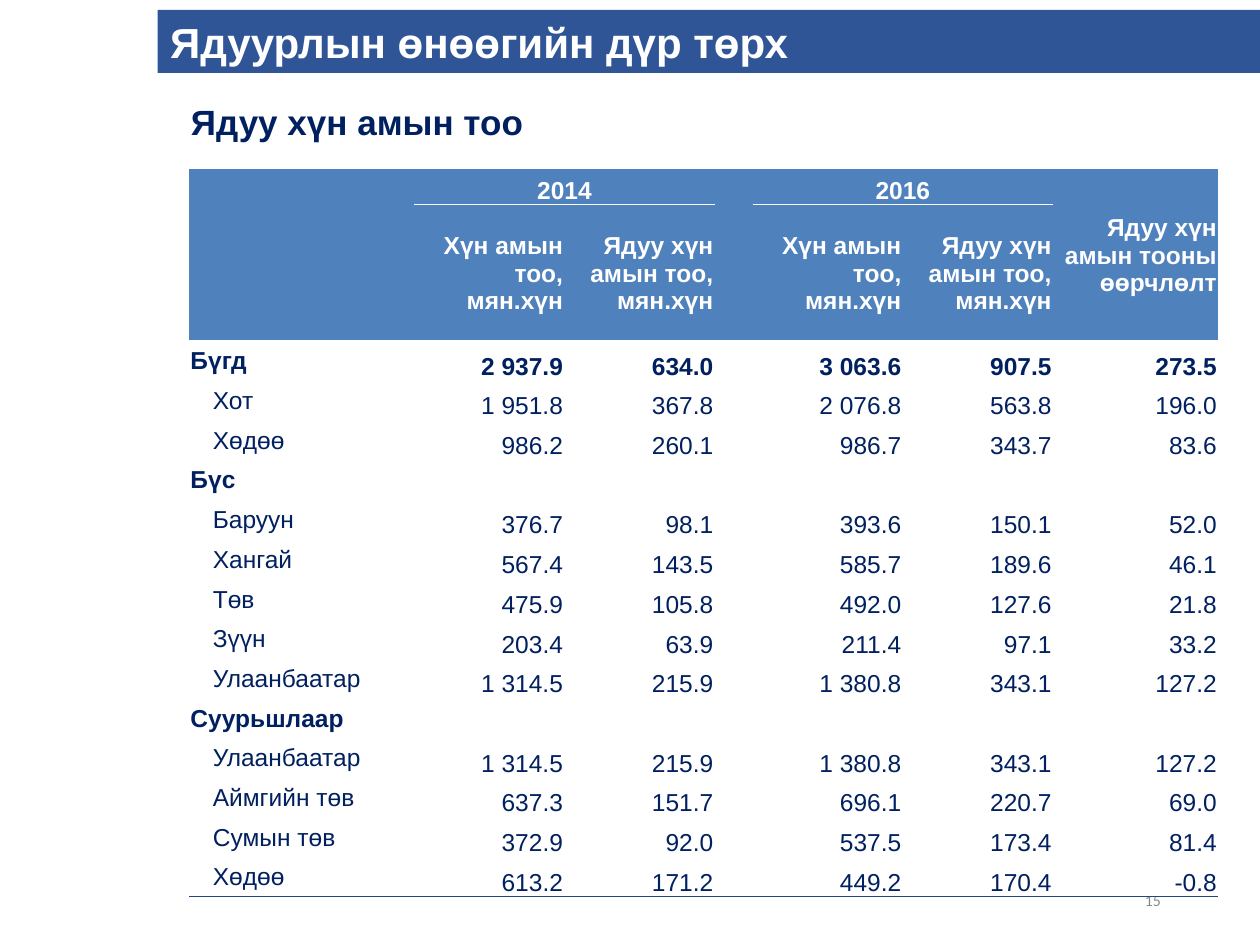
from dataclasses import dataclass

from lxml import etree
from pptx import Presentation
from pptx.dml.color import RGBColor
from pptx.enum.shapes import MSO_SHAPE
from pptx.enum.text import MSO_ANCHOR, PP_ALIGN
from pptx.oxml.ns import qn
from pptx.util import Cm, Pt

LEFT, CENTER, RIGHT = PP_ALIGN.LEFT, PP_ALIGN.CENTER, PP_ALIGN.RIGHT
TOP, MIDDLE, BOTTOM = MSO_ANCHOR.TOP, MSO_ANCHOR.MIDDLE, MSO_ANCHOR.BOTTOM
RECTANGLE = MSO_SHAPE.RECTANGLE


@dataclass(frozen=True)
class Theme:
    banner: str = "2F5597"
    header: str = "4F81BD"
    navy: str = "002060"
    rule: str = "1F497D"
    white: str = "FFFFFF"
    grey: str = "898989"
    font: str = "Arial"
    number_font: str = "Calibri"
    title_size: int = 24
    heading_size: int = 20
    table_size: int = 14
    number_size: int = 9


COLUMN_WIDTHS = [4.54, 3.03, 3.03, 0.76, 3.03, 3.03, 3.33]
HEADER_HEIGHTS = [0.73, 2.74]
BODY_HEIGHT = 0.8
VALUE_COLUMNS = [1, 2, 4, 5, 6]
YEARS = {1: "2014", 4: "2016"}
POPULATION = "Хүн амын тоо, мян.хүн"
POOR = "Ядуу хүн амын тоо, мян.хүн"
CHANGE = "Ядуу хүн амын тооны өөрчлөлт"
GROUPS = {"Бүгд", "Бүс", "Суурьшлаар"}
ROWS = [
    ("Бүгд", "2 937.9", "634.0", "3 063.6", "907.5", "273.5"),
    ("Хот", "1 951.8", "367.8", "2 076.8", "563.8", "196.0"),
    ("Хөдөө", "986.2", "260.1", "986.7", "343.7", "83.6"),
    ("Бүс",),
    ("Баруун", "376.7", "98.1", "393.6", "150.1", "52.0"),
    ("Хангай", "567.4", "143.5", "585.7", "189.6", "46.1"),
    ("Төв", "475.9", "105.8", "492.0", "127.6", "21.8"),
    ("Зүүн", "203.4", "63.9", "211.4", "97.1", "33.2"),
    ("Улаанбаатар", "1 314.5", "215.9", "1 380.8", "343.1", "127.2"),
    ("Суурьшлаар",),
    ("Улаанбаатар", "1 314.5", "215.9", "1 380.8", "343.1", "127.2"),
    ("Аймгийн төв", "637.3", "151.7", "696.1", "220.7", "69.0"),
    ("Сумын төв", "372.9", "92.0", "537.5", "173.4", "81.4"),
    ("Хөдөө", "613.2", "171.2", "449.2", "170.4", "-0.8"),
]


def write(frame, text, *, size, color, font, bold=False, align=LEFT):
    para = frame.paragraphs[0]
    para.alignment = align
    if not text:
        etree.SubElement(para._p, qn("a:endParaRPr"), sz=str(size * 100))
        return
    span = para.add_run()
    span.text = text
    span.font.size = Pt(size)
    span.font.name = font
    span.font.bold = bold
    span.font.color.rgb = RGBColor.from_string(color)


class SlideBuilder:
    def __init__(self, page, theme):
        self.page = page
        self.theme = theme

    def banner(self, text, left, top, width, height):
        box = self.page.shapes.add_shape(
            RECTANGLE, Cm(left), Cm(top), Cm(width), Cm(height))
        box.shadow.inherit = False
        box.fill.solid()
        box.fill.fore_color.rgb = RGBColor.from_string(self.theme.banner)
        box.line.fill.background()
        write(box.text_frame, text, size=self.theme.title_size,
              color=self.theme.white, font=self.theme.font, bold=True)

    def text(self, text, left, top, width, height, anchor=TOP, **style):
        box = self.page.shapes.add_textbox(
            Cm(left), Cm(top), Cm(width), Cm(height))
        box.text_frame.word_wrap = True
        box.text_frame.vertical_anchor = anchor
        write(box.text_frame, text, **style)

    def table(self, left, top, widths, heights):
        frame = self.page.shapes.add_table(
            len(heights), len(widths), Cm(left), Cm(top),
            Cm(sum(widths)), Cm(sum(heights)))
        table = frame.table
        table.first_row = table.horz_banding = False
        for column, width in zip(table.columns, widths):
            column.width = Cm(width)
        for row, height in zip(table.rows, heights):
            row.height = Cm(height)
        return table

    def cell(self, cell, text, *, fill, color, anchor, align, bold=False,
             indent=0.03, above=None, below=None):
        cell.margin_left, cell.margin_right = Cm(indent), Cm(0.03)
        cell.margin_top, cell.margin_bottom = Cm(0.03), Cm(0)
        cell.vertical_anchor = anchor
        self.borders(cell, above, below)
        cell.fill.solid()
        cell.fill.fore_color.rgb = RGBColor.from_string(fill)
        write(cell.text_frame, text, size=self.theme.table_size, color=color,
              font=self.theme.font, bold=bold, align=align)

    def borders(self, cell, above, below):
        properties = cell._tc.get_or_add_tcPr()
        sides = {"lnL": None, "lnR": None, "lnT": above, "lnB": below}
        for side, color in sides.items():
            line = etree.SubElement(
                properties, qn(f"a:{side}"), w=str(Pt(0.5)))
            if color:
                solid = etree.SubElement(line, qn("a:solidFill"))
                etree.SubElement(solid, qn("a:srgbClr"), val=color)
            else:
                etree.SubElement(line, qn("a:noFill"))

    def header_rows(self, table):
        white = self.theme.white
        last = len(COLUMN_WIDTHS) - 1
        years = {**YEARS, last: CHANGE}
        measures = {1: POPULATION, 2: POOR, 4: POPULATION, 5: POOR}
        for row, labels in enumerate((years, measures)):
            for column in range(last + 1):
                ruled = white if column in measures else None
                self.cell(
                    table.cell(row, column), labels.get(column, ""),
                    fill=self.theme.header, color=white, bold=True,
                    anchor=BOTTOM if row == 0 and column in YEARS else MIDDLE,
                    align=CENTER if row == 0 and column in YEARS else RIGHT,
                    above=white if row == 0 else ruled,
                    below=ruled if row == 0 else white)
        for column in YEARS:
            table.cell(0, column).merge(table.cell(0, column + 1))
        for column in (0, last):
            table.cell(0, column).merge(table.cell(1, column))

    def body_rows(self, table):
        for row, (label, *values) in enumerate(ROWS, len(HEADER_HEIGHTS)):
            texts = dict(zip(VALUE_COLUMNS, values))
            texts[0] = label
            group = label in GROUPS
            final = row == len(table.rows) - 1
            for column in range(len(COLUMN_WIDTHS)):
                first = column == 0
                self.cell(
                    table.cell(row, column), texts.get(column, ""),
                    fill=self.theme.white, color=self.theme.navy, bold=group,
                    anchor=MIDDLE if first else BOTTOM,
                    align=LEFT if first else RIGHT,
                    indent=0.48 if first and not group else 0.03,
                    above=self.theme.white if group else None,
                    below=self.theme.rule if final else None)


def main():
    deck = Presentation()
    deck.slide_width, deck.slide_height = Cm(25.4), Cm(19.05)
    theme = Theme()
    slide = SlideBuilder(deck.slides.add_slide(deck.slide_layouts[6]), theme)
    slide.text("15", 17.93, 17.65, 5.72, 1.01, anchor=MIDDLE, align=RIGHT,
               size=theme.number_size, color=theme.grey,
               font=theme.number_font)
    slide.banner("Ядуурлын өнөөгийн дүр төрх", 3.18, 0.2, 22.22, 1.27)
    slide.text("Ядуу хүн амын тоо", 3.6, 1.9, 18.62, 1.11, bold=True,
               size=theme.heading_size, color=theme.navy, font=theme.font)
    table = slide.table(3.81, 3.4, COLUMN_WIDTHS,
                        HEADER_HEIGHTS + [BODY_HEIGHT] * len(ROWS))
    slide.header_rows(table)
    slide.body_rows(table)
    deck.save("out.pptx")


if __name__ == "__main__":
    main()
